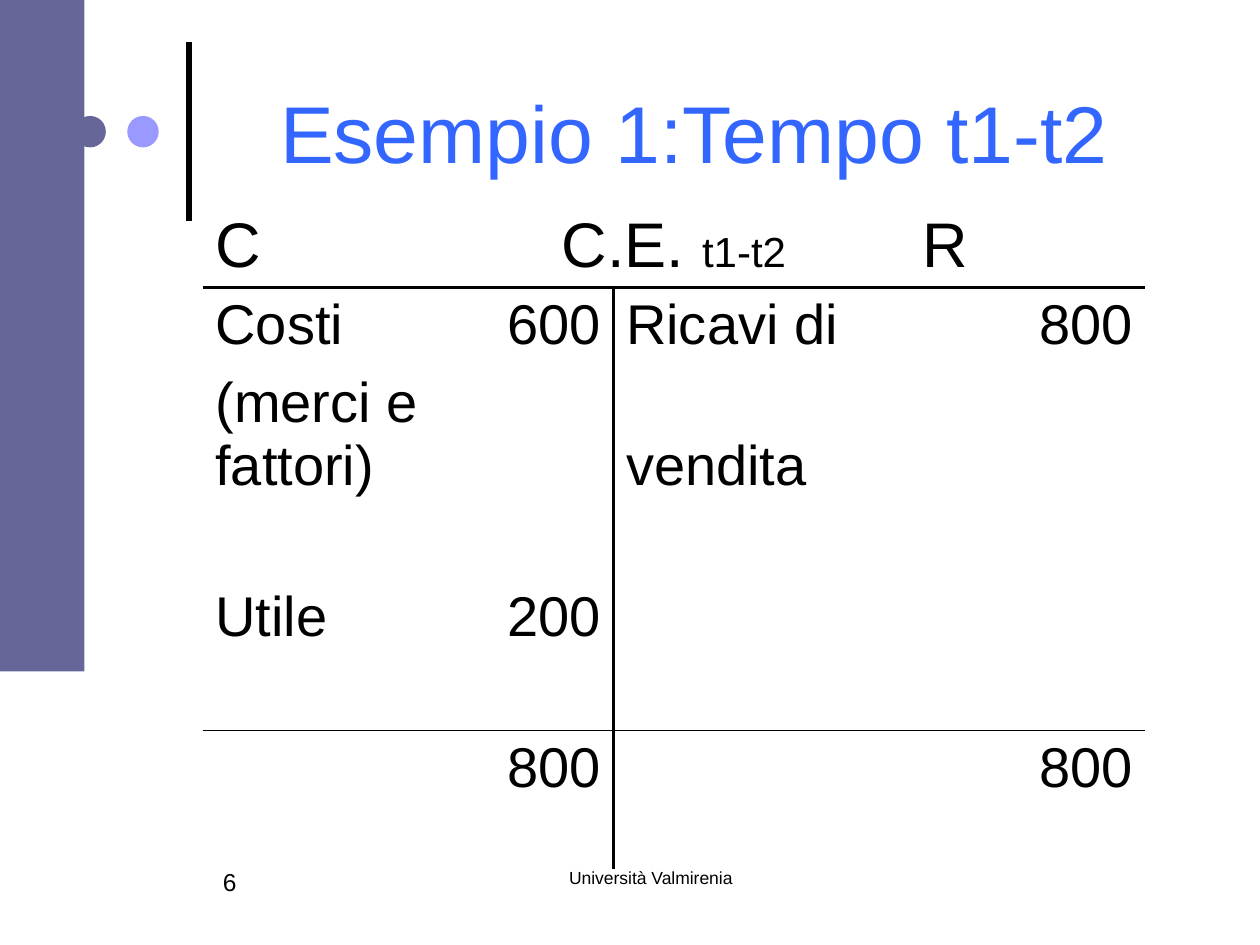
"""Build a slide with a two-sided profit and loss account."""
import pptx
import pptx.util
import pptx.dml.color
import pptx.enum.shapes
import pptx.enum.text
import pptx.oxml
import pptx.oxml.ns
from lxml import etree

Inches = pptx.util.Inches
ALIGN = pptx.enum.text.PP_ALIGN
ANCHOR = pptx.enum.text.MSO_ANCHOR
SHAPE = pptx.enum.shapes.MSO_SHAPE

COLORS = {"text": "000000", "title": "3366FF", "band": "666699", "dot": "9999FF"}
FONT = "Arial"

DECORATIONS = [
    (SHAPE.OVAL, (0.59, 0.92, 0.25, 0.25), "band"),
    (SHAPE.OVAL, (1.01, 0.92, 0.25, 0.25), "dot"),
    (SHAPE.RECTANGLE, (0, 0, 0.67, 5.33), "band"),
]
TEXTS = [
    ("Università Valmirenia", (3.58, 6.83, 3.17, 0.5), 10, "text", ALIGN.CENTER, ANCHOR.TOP),
    ("6", (1.67, 6.83, 1.42, 0.5), 14, "text", ALIGN.LEFT, ANCHOR.TOP),
    ("Esempio 1:Tempo t1-t2", (1.67, 0.21, 7.67, 1.67), 46, "title", ALIGN.CENTER, ANCHOR.MIDDLE),
]

HEADER = [[("C", 36)], [("C.E. ", 36), ("t1-t2", 24)], [], [("R", 36)]]
ENTRIES = [
    ["Costi", "600", "Ricavi di", "800"],
    ["(merci e fattori)", "", "vendita", ""],
    ["", "", "", ""],
    ["Utile", "200", "", ""],
    ["", "", "", ""],
    ["", "800", "", "800"],
    ["", "", "", ""],
]
ENTRY_SIZE = 32
TABLE_LEFT, TABLE_TOP = 1.61, 1.62
COLUMN_WIDTHS = [1.87, 1.39, 2.35, 1.87]
ROW_HEIGHTS = [0.66, 0.6, 1.1, 0.6, 0.6, 0.6, 0.6, 0.5]
COLUMN_ALIGNMENTS = [ALIGN.LEFT, ALIGN.RIGHT, ALIGN.LEFT, ALIGN.RIGHT]
RULE_BELOW_ROW = {0: 2, 5: 1}
RULE_AFTER_COLUMN = {1: 2}


def rgb(name):
    return pptx.dml.color.RGBColor.from_string(COLORS[name])


def add_run(paragraph, text, size, color="text"):
    run = paragraph.add_run()
    run.text = text
    run.font.name = FONT
    run.font.size = pptx.util.Pt(size)
    run.font.color.rgb = rgb(color)


def add_decoration(slide, kind, box, color):
    shape = slide.shapes.add_shape(kind, *map(Inches, box))
    shape.shadow.inherit = False
    shape.fill.solid()
    shape.fill.fore_color.rgb = rgb(color)
    shape.line.fill.background()


def add_vertical_line(slide):
    line = slide.shapes.add_connector(
        pptx.enum.shapes.MSO_CONNECTOR.STRAIGHT,
        Inches(1.5), Inches(1.75), Inches(1.5), Inches(0.33))
    line.line.color.rgb = rgb("text")
    line.line.width = pptx.util.Pt(3)
    properties = line._element.find(pptx.oxml.ns.qn("p:spPr"))
    etree.SubElement(properties, pptx.oxml.ns.qn("a:effectLst"))


def add_text(slide, text, box, size, color, alignment, anchor):
    frame = slide.shapes.add_textbox(*map(Inches, box)).text_frame
    frame.word_wrap = True
    frame.vertical_anchor = anchor
    frame.paragraphs[0].alignment = alignment
    add_run(frame.paragraphs[0], text, size, color)


def set_borders(cell, row, column):
    qn = pptx.oxml.ns.qn
    properties = cell._tc.get_or_add_tcPr()
    widths = {
        "a:lnL": RULE_AFTER_COLUMN.get(column - 1) if row else None,
        "a:lnR": RULE_AFTER_COLUMN.get(column) if row else None,
        "a:lnT": RULE_BELOW_ROW.get(row - 1),
        "a:lnB": RULE_BELOW_ROW.get(row),
    }
    for tag, width in widths.items():
        border = etree.SubElement(properties, qn(tag))
        if width:
            border.set("w", str(pptx.util.Pt(width)))
            fill = etree.SubElement(border, qn("a:solidFill"))
            etree.SubElement(fill, qn("a:srgbClr"), val=COLORS["text"])
        else:
            etree.SubElement(border, qn("a:noFill"))


def add_account(slide):
    rows = [HEADER] + [
        [[(text, ENTRY_SIZE)] if text else [] for text in entry] for entry in ENTRIES]
    table = slide.shapes.add_table(
        len(rows), len(COLUMN_WIDTHS), Inches(TABLE_LEFT), Inches(TABLE_TOP),
        Inches(sum(COLUMN_WIDTHS)), Inches(sum(ROW_HEIGHTS))).table
    table.first_row = False
    table.horz_banding = False
    for column, width in zip(table.columns, COLUMN_WIDTHS):
        column.width = Inches(width)
    for row, height in zip(table.rows, ROW_HEIGHTS):
        row.height = Inches(height)
    table.cell(0, 1).merge(table.cell(0, 2))

    for row, cells in enumerate(rows):
        for column, runs in enumerate(cells):
            cell = table.cell(row, column)
            cell.vertical_anchor = ANCHOR.BOTTOM
            cell.margin_top = 0
            set_borders(cell, row, column)
            cell.fill.background()
            paragraph = cell.text_frame.paragraphs[0]
            if row:
                paragraph.alignment = COLUMN_ALIGNMENTS[column]
            else:
                paragraph.alignment = ALIGN.CENTER if column == 1 else ALIGN.LEFT
            for text, size in runs:
                add_run(paragraph, text, size)


def main():
    presentation = pptx.Presentation()
    presentation.slide_width = Inches(10)
    presentation.slide_height = Inches(7.5)
    slide = presentation.slides.add_slide(presentation.slide_layouts[6])
    add_vertical_line(slide)
    for decoration in DECORATIONS:
        add_decoration(slide, *decoration)
    for text in TEXTS:
        add_text(slide, *text)
    add_account(slide)
    presentation.save("out.pptx")


if __name__ == "__main__":
    main()
